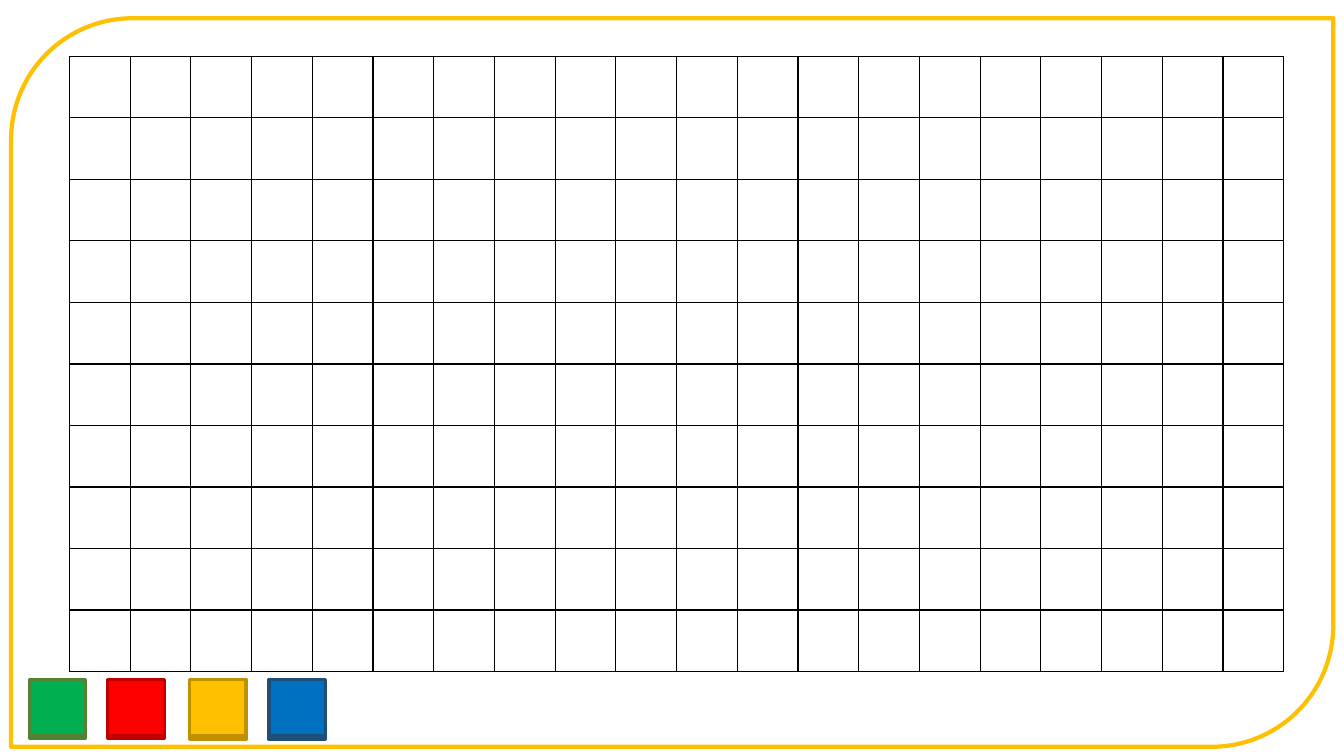
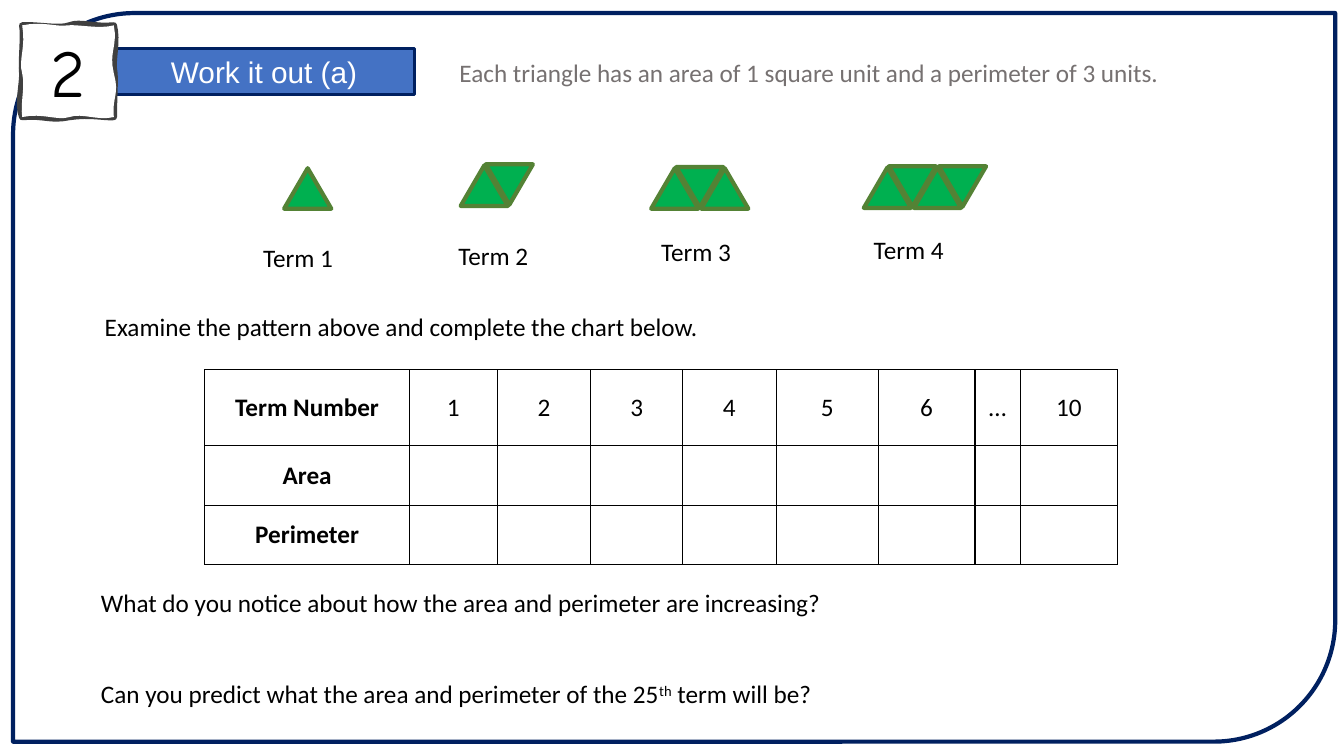
from dataclasses import dataclass

from lxml import etree
from pptx import Presentation
from pptx.dml.color import RGBColor
from pptx.enum.shapes import MSO_SHAPE
from pptx.enum.text import MSO_ANCHOR, MSO_AUTO_SIZE, PP_ALIGN
from pptx.oxml.ns import qn
from pptx.util import Cm, Pt

FRAME_SHAPE = MSO_SHAPE.ROUND_2_DIAG_RECTANGLE
SQUARE = MSO_SHAPE.RECTANGLE
TRIANGLE = MSO_SHAPE.ISOSCELES_TRIANGLE
MIDDLE, TOP = MSO_ANCHOR.MIDDLE, MSO_ANCHOR.TOP
CENTER, LEFT = PP_ALIGN.CENTER, PP_ALIGN.LEFT
FIXED_SIZE = MSO_AUTO_SIZE.NONE

BLACK = RGBColor(0x00, 0x00, 0x00)
WHITE = RGBColor(0xFF, 0xFF, 0xFF)
GRAY = RGBColor(0x76, 0x71, 0x71)
CHARCOAL = RGBColor(0x40, 0x40, 0x40)
GOLD = RGBColor(0xFF, 0xC0, 0x01)
NAVY = RGBColor(0x00, 0x20, 0x60)
BANNER_BLUE = RGBColor(0x44, 0x72, 0xC4)
GREEN = RGBColor(0x00, 0xB0, 0x50)
DARK_GREEN = RGBColor(0x54, 0x82, 0x35)
RED = RGBColor(0xFF, 0x00, 0x00)
DARK_RED = RGBColor(0xC0, 0x00, 0x00)
YELLOW = RGBColor(0xFF, 0xC0, 0x00)
DARK_YELLOW = RGBColor(0xBF, 0x90, 0x00)
BLUE = RGBColor(0x00, 0x70, 0xC0)
DARK_BLUE = RGBColor(0x1F, 0x4E, 0x79)

TEXT_FONT, BANNER_FONT, BADGE_FONT = "Calibri", "Arial", "Comic Neue"

# Lengths in the data below are in centimetres.
TILE_SIZE, TILE_TOP, TILE_SHIFT = 1.42, 17.12, 0.03
TRIANGLE_WIDTH, TRIANGLE_HEIGHT, TRIANGLE_STEP = 1.19, 1.02, 0.63

BADGE_START = (0.56, 0.64)
# Each curve: first control point, second control point, end point
BADGE_OUTLINE = [
    ((0.91, 0.61), (1.50, 0.74), (1.75, 0.64)),
    ((2.03, 0.53), (2.36, 0.69), (2.87, 0.64)),
    ((2.97, 1.02), (2.84, 1.50), (2.87, 1.73)),
    ((2.92, 1.96), (2.87, 2.41), (2.87, 2.95)),
    ((2.62, 2.97), (2.29, 2.87), (1.75, 2.95)),
    ((1.24, 3.05), (1.14, 2.90), (0.56, 2.95)),
    ((0.43, 2.64), (0.58, 2.08), (0.56, 1.83)),
    ((0.53, 1.57), (0.61, 0.89), (0.56, 0.64)),
]
BADGE_INSIDE = [
    ((1.09, 0.53), (1.45, 0.69), (1.70, 0.64)),
    ((1.96, 0.61), (2.51, 0.74), (2.87, 0.64)),
    ((2.97, 1.17), (2.74, 1.30), (2.87, 1.85)),
    ((3.02, 2.39), (2.82, 2.44), (2.87, 2.95)),
    ((2.46, 3.05), (2.08, 2.84), (1.75, 2.95)),
    ((1.45, 3.05), (1.09, 2.84), (0.56, 2.95)),
    ((0.51, 2.57), (0.64, 2.21), (0.56, 1.85)),
    ((0.46, 1.50), (0.66, 1.19), (0.56, 0.64)),
]


@dataclass
class TileStack:
    left: float
    count: int
    fill: RGBColor
    outline: RGBColor


@dataclass
class Term:
    number: int
    left: float
    top: float
    label_left: float
    label_top: float


TILE_STACKS = [
    TileStack(6.78, 4, BLUE, DARK_BLUE),
    TileStack(4.78, 4, YELLOW, DARK_YELLOW),
    TileStack(2.72, 3, RED, DARK_RED),
    TileStack(0.74, 3, GREEN, DARK_GREEN),
]

TERMS = [
    Term(1, 7.16, 4.24, 6.38, 5.99),
    Term(2, 11.61, 4.17, 11.30, 5.92),
    Term(3, 16.41, 4.24, 16.41, 5.82),
    Term(4, 21.77, 4.22, 21.77, 5.77),
]

CHART_ROWS = [
    ["Term Number", "1", "2", "3", "4", "5", "6", "…", "10"],
    ["Area"] + [""] * 8,
    ["Perimeter"] + [""] * 8,
]
CHART_COLUMNS = [5.16, 2.21, 2.36, 2.31, 2.36, 2.57, 2.44, 1.14, 2.46]
CHART_HEIGHTS = [1.91, 1.5, 1.5]


def paint(shape, fill: RGBColor | None, outline: RGBColor | None, weight: float = 0) -> None:
    if fill is None:
        shape.fill.background()
    else:
        shape.fill.solid()
        shape.fill.fore_color.rgb = fill
    if outline is None:
        shape.line.fill.background()
    else:
        shape.line.color.rgb = outline
        shape.line.width = Pt(weight)


def add_preset(slide, preset, left: float, top: float, width: float, height: float,
               fill: RGBColor | None, outline: RGBColor, weight: float):
    shape = slide.shapes.add_shape(preset, Cm(left), Cm(top), Cm(width), Cm(height))
    shape.shadow.inherit = False
    paint(shape, fill, outline, weight)
    return shape


def place(shape, left: float, top: float, width: float, height: float) -> None:
    shape.left, shape.top = Cm(left), Cm(top)
    shape.width, shape.height = Cm(width), Cm(height)


def style(paragraph, color: RGBColor = BLACK, size: float = 18, font: str = TEXT_FONT,
          bold: bool = False, align=LEFT) -> None:
    paragraph.alignment = align
    paragraph.font.name = font
    paragraph.font.size = Pt(size)
    paragraph.font.bold = bold
    paragraph.font.color.rgb = color


def add_frame(slide, left: float, top: float, color: RGBColor) -> None:
    add_preset(slide, FRAME_SHAPE, left, top, 33.32, 18.36, None, color, 3)


def add_text(slide, text: str, left: float, top: float, width: float,
             color: RGBColor = BLACK) -> None:
    box = slide.shapes.add_textbox(Cm(left), Cm(top), Cm(width), Cm(1.02))
    box.text_frame.word_wrap = True
    box.text_frame.text = text
    style(box.text_frame.paragraphs[0], color)


def add_borders(cell) -> None:
    properties = cell._tc.get_or_add_tcPr()
    for side in ("a:lnL", "a:lnR", "a:lnT", "a:lnB"):
        border = etree.SubElement(properties, qn(side), w=str(Pt(1)))
        solid = etree.SubElement(border, qn("a:solidFill"))
        etree.SubElement(solid, qn("a:srgbClr"), val=str(BLACK))


def add_grid(slide, left: float, top: float, widths: list[float], heights: list[float]):
    """Add an unfilled table with black borders."""
    table = slide.shapes.add_table(len(heights), len(widths), Cm(left), Cm(top),
                                   Cm(sum(widths)), Cm(sum(heights))).table
    table.first_row = table.horz_banding = False
    for column, width in zip(table.columns, widths):
        column.width = Cm(width)
    for row, height in zip(table.rows, heights):
        row.height = Cm(height)
    for cell in table.iter_cells():
        add_borders(cell)
        cell.fill.background()
    return table


def add_curved_outline(slide, curves: list, steps: int = 8):
    """Draw a closed chain of cubic curves as short straight segments."""
    points = []
    start = BADGE_START
    for first, second, end in curves:
        for t in (step / steps for step in range(1, steps + 1)):
            weights = ((1 - t) ** 3, 3 * t * (1 - t) ** 2, 3 * t * t * (1 - t), t ** 3)
            controls = (start, first, second, end)
            points.append(tuple(Cm(sum(w * c[axis] for w, c in zip(weights, controls)))
                                for axis in (0, 1)))
        start = end
    builder = slide.shapes.build_freeform(Cm(BADGE_START[0]), Cm(BADGE_START[1]))
    builder.add_line_segments(points)
    shape = builder.convert_to_shape()
    shape.shadow.inherit = False
    return shape


def add_badge(slide, number: str) -> None:
    paint(add_curved_outline(slide, BADGE_OUTLINE), None, CHARCOAL, 4.5)
    inside = add_curved_outline(slide, BADGE_INSIDE)
    paint(inside, WHITE, None)
    inside.text_frame.text = number
    inside.text_frame.vertical_anchor = MIDDLE
    style(inside.text_frame.paragraphs[0], size=48, font=BADGE_FONT, align=CENTER)


def add_banner(slide, text: str) -> None:
    banner = slide.shapes.title
    place(banner, 2.87, 1.22, 7.57, 1.17)
    paint(banner, BANNER_BLUE, NAVY, 2.25)
    banner.text_frame.text = text
    banner.text_frame.auto_size = FIXED_SIZE
    banner.text_frame.vertical_anchor = MIDDLE
    style(banner.text_frame.paragraphs[0], WHITE, 21.3, BANNER_FONT, align=CENTER)


def add_questions(slide) -> None:
    body = slide.placeholders[1]
    place(body, 2.29, 14.66, 26.85, 3.33)
    frame = body.text_frame
    frame.auto_size = FIXED_SIZE
    frame.vertical_anchor = TOP
    frame.text = "What do you notice about how the area and perimeter are increasing?"
    prediction = frame.add_paragraph()
    for text in ("Can you predict what the area and perimeter of the 25", "th", " term will be?"):
        run = prediction.add_run()
        run.text = text
        if text == "th":
            run._r.get_or_add_rPr().set("baseline", "30000")
    for paragraph, gap in zip(frame.paragraphs, (0, 44)):
        style(paragraph)
        paragraph.space_before = Pt(gap)
        properties = paragraph._p.get_or_add_pPr()
        properties.set("marL", "0")
        properties.set("indent", "0")
        bullet_none = etree.Element(qn("a:buNone"))
        properties.find(qn("a:defRPr")).addprevious(bullet_none)


def add_term(slide, term: Term) -> None:
    for index in range(term.number):
        upside_down = index % 2 == 1
        triangle = add_preset(slide, TRIANGLE, term.left + index * TRIANGLE_STEP,
                              term.top - (0.03 if upside_down else 0),
                              TRIANGLE_WIDTH, TRIANGLE_HEIGHT, GREEN, DARK_GREEN, 3)
        triangle.rotation = 180 if upside_down else 0
    add_text(slide, f"Term {term.number}", term.label_left, term.label_top, 2.74)


def add_term_chart(slide) -> None:
    table = add_grid(slide, 5.16, 9.32, CHART_COLUMNS, CHART_HEIGHTS)
    for row, values in enumerate(CHART_ROWS):
        for column, value in enumerate(values):
            cell = table.cell(row, column)
            cell.text = value
            cell.vertical_anchor = MIDDLE
            style(cell.text_frame.paragraphs[0], bold=column == 0, align=CENTER)


def build_tile_slide(prs) -> None:
    slide = prs.slides.add_slide(prs.slide_layouts[6])
    add_frame(slide, 0.28, 0.46, GOLD)
    add_grid(slide, 1.75, 1.42, [1.53] * 20, [1.55] * 10)
    for stack in TILE_STACKS:
        for level in reversed(range(stack.count)):
            add_preset(slide, SQUARE, stack.left, TILE_TOP + level * TILE_SHIFT,
                       TILE_SIZE, TILE_SIZE, stack.fill, stack.outline, 2.25)


def build_pattern_slide(prs) -> None:
    slide = prs.slides.add_slide(prs.slide_layouts[1])
    add_frame(slide, 0.33, 0.33, NAVY)
    add_banner(slide, "Work it out (a)")
    add_badge(slide, "2")
    add_text(slide, "Each triangle has an area of 1 square unit and a perimeter of 3 units.",
             11.33, 1.32, 18.62, GRAY)
    for term in TERMS:
        add_term(slide, term)
    add_text(slide, "Examine the pattern above and complete the chart below.", 2.39, 7.72, 26.85)
    add_term_chart(slide)
    add_questions(slide)


def main() -> None:
    prs = Presentation()
    prs.slide_width, prs.slide_height = Cm(33.87), Cm(19.05)
    build_tile_slide(prs)
    build_pattern_slide(prs)
    prs.save("out.pptx")


if __name__ == "__main__":
    main()
